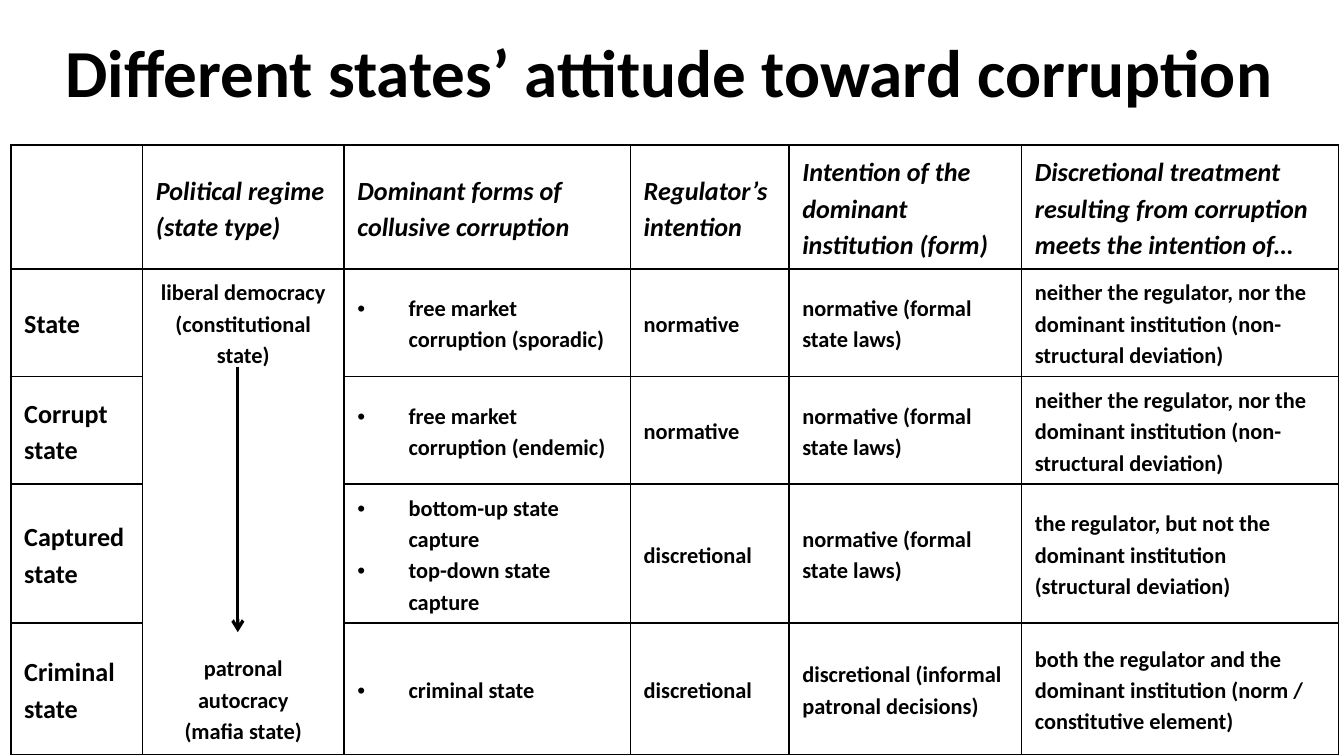
from lxml.etree import SubElement
from pptx import Presentation
from pptx.dml.color import RGBColor
from pptx.enum.shapes import MSO_CONNECTOR as Connector
from pptx.enum.text import MSO_ANCHOR as Anchor, PP_ALIGN as Align
from pptx.oxml.ns import qn
from pptx.util import Inches, Pt

BLACK = RGBColor(0, 0, 0)
FONT = "Calibri"
WIDTH = 10
HEIGHT = WIDTH * 9 / 16
TITLE_BOX = (-0.04, 0.29, 10.04, 0.47)
TABLE_BOX = (0.08, 1.08, 9.88, 4.53)
COLUMNS = (0.98, 1.5, 2.13, 1.18, 1.73, 2.36)
ROWS = (0.92, 0.8, 0.8, 1.03, 0.98)
REGIME_COLUMN, FORMS_COLUMN = 1, 2
REGIME_GAP = Pt(151)
REGIME_MARGIN = Inches(0.11)

TITLE_FORMAT = {"size": Pt(36), "bold": True}
HEADER_FORMAT = {"size": Pt(14), "bold": True, "italic": True}
STATE_FORMAT = {"size": Pt(14), "bold": True}
BODY_FORMAT = {"size": Pt(12), "bold": True}

NEITHER = "neither the regulator, nor the dominant institution (non-structural deviation)"
FORMAL = "normative (formal state laws)"
REGIMES = "liberal democracy\v(constitutional state)\npatronal autocracy\n(mafia state)"
CONTENT = (
    ("", "Political regime (state type)", "Dominant forms of collusive corruption",
     "Regulator’s intention", "Intention of the dominant institution (form)",
     "Discretional treatment resulting from corruption meets the intention of…"),
    ("State", REGIMES, "free market corruption (sporadic)", "normative", FORMAL, NEITHER),
    ("Corrupt state", "", "free market corruption (endemic)", "normative", FORMAL, NEITHER),
    ("Captured state", "", "bottom-up state capture\ntop-down state capture", "discretional",
     FORMAL, "the regulator, but not the dominant institution (structural deviation)"),
    ("Criminal state", "", "criminal state", "discretional",
     "discretional (informal patronal decisions)",
     "both the regulator and the dominant institution (norm / constitutive element)"),
)


def format_font(font, values):
    """Apply the common typeface and colour, then the given values."""
    font.color.rgb = BLACK
    for name, value in {"name": FONT, **values}.items():
        setattr(font, name, value)


def add_bullet(paragraph):
    """Give a paragraph a hanging bullet."""
    properties = paragraph._p.get_or_add_pPr()
    indent = Inches(0.38)
    properties.set("marL", str(indent))
    properties.set("indent", str(-indent))
    SubElement(properties, qn("a:buFont"), typeface="Arial")
    SubElement(properties, qn("a:buChar"), char="•")


def add_borders(cell, sides):
    """Draw thin black borders on the given sides of a cell."""
    properties = cell._tc.get_or_add_tcPr()
    for side in sides:
        line = SubElement(properties, qn(f"a:ln{side}"), w=str(Pt(1)))
        fill = SubElement(line, qn("a:solidFill"))
        SubElement(fill, qn("a:srgbClr"), val=str(BLACK))


def fill_cell(cell, text, values, bulleted=False):
    """Write formatted text into a bordered, unfilled cell."""
    add_borders(cell, "LR" if cell.is_spanned else "LRTB")
    cell.fill.background()
    cell.vertical_anchor = Anchor.MIDDLE
    cell.text = text
    for paragraph in cell.text_frame.paragraphs:
        paragraph.line_spacing = 1.15
        for run in paragraph.runs:
            format_font(run.font, values)
        if bulleted:
            add_bullet(paragraph)


def add_title(slide, box):
    """Place the slide title in its box."""
    title = slide.shapes.title
    title.left, title.top, title.width, title.height = map(Inches, box)
    title.text = "Different states’ attitude toward corruption"
    title.text_frame.vertical_anchor = Anchor.MIDDLE
    paragraph = title.text_frame.paragraphs[0]
    paragraph.alignment = Align.CENTER
    format_font(paragraph.runs[0].font, TITLE_FORMAT)


def format_regimes(cell):
    """Centre the regimes and set them at both ends of the merged cell."""
    cell.vertical_anchor = Anchor.TOP
    cell.margin_left = cell.margin_right = REGIME_MARGIN
    for paragraph in cell.text_frame.paragraphs:
        paragraph.alignment = Align.CENTER
    cell.text_frame.paragraphs[1].space_before = REGIME_GAP


def add_state_table(slide, box):
    """Place the comparison table in its box, with the regime column merged."""
    table = slide.shapes.add_table(len(ROWS), len(COLUMNS), *map(Inches, box)).table
    table.horz_banding = table.first_row = False
    for column, share in zip(table.columns, COLUMNS):
        column.width = Inches(box[2] * share / sum(COLUMNS))
    for row, share in zip(table.rows, ROWS):
        row.height = Inches(box[3] * share / sum(ROWS))
    regime = table.cell(1, REGIME_COLUMN)
    regime.merge(table.cell(len(ROWS) - 1, REGIME_COLUMN))
    for row, texts in enumerate(CONTENT):
        for column, text in enumerate(texts):
            values = HEADER_FORMAT if row == 0 else STATE_FORMAT if column == 0 else BODY_FORMAT
            fill_cell(table.cell(row, column), text, values, row > 0 and column == FORMS_COLUMN)
    format_regimes(regime)


def add_regime_arrow(slide, box):
    """Point from liberal democracy down to patronal autocracy inside the table box."""
    left, top, width, height = box
    x = Inches(left + 0.17 * width + 0.01)
    start, end = (Inches(top + share * height) for share in (0.364, 0.8))
    arrow = slide.shapes.add_connector(Connector.STRAIGHT, x, start, x, end)
    arrow.line.color.rgb = BLACK
    arrow.line.width = Pt(1.75)
    SubElement(arrow.line._get_or_add_ln(), qn("a:tailEnd"), type="arrow")
    SubElement(arrow._element.spPr, qn("a:effectLst"))


def main():
    """Build and save the presentation."""
    presentation = Presentation()
    presentation.slide_width, presentation.slide_height = Inches(WIDTH), Inches(HEIGHT)
    slide = presentation.slides.add_slide(presentation.slide_layouts[5])
    add_title(slide, TITLE_BOX)
    add_state_table(slide, TABLE_BOX)
    add_regime_arrow(slide, TABLE_BOX)
    presentation.save("out.pptx")


if __name__ == "__main__":
    main()
